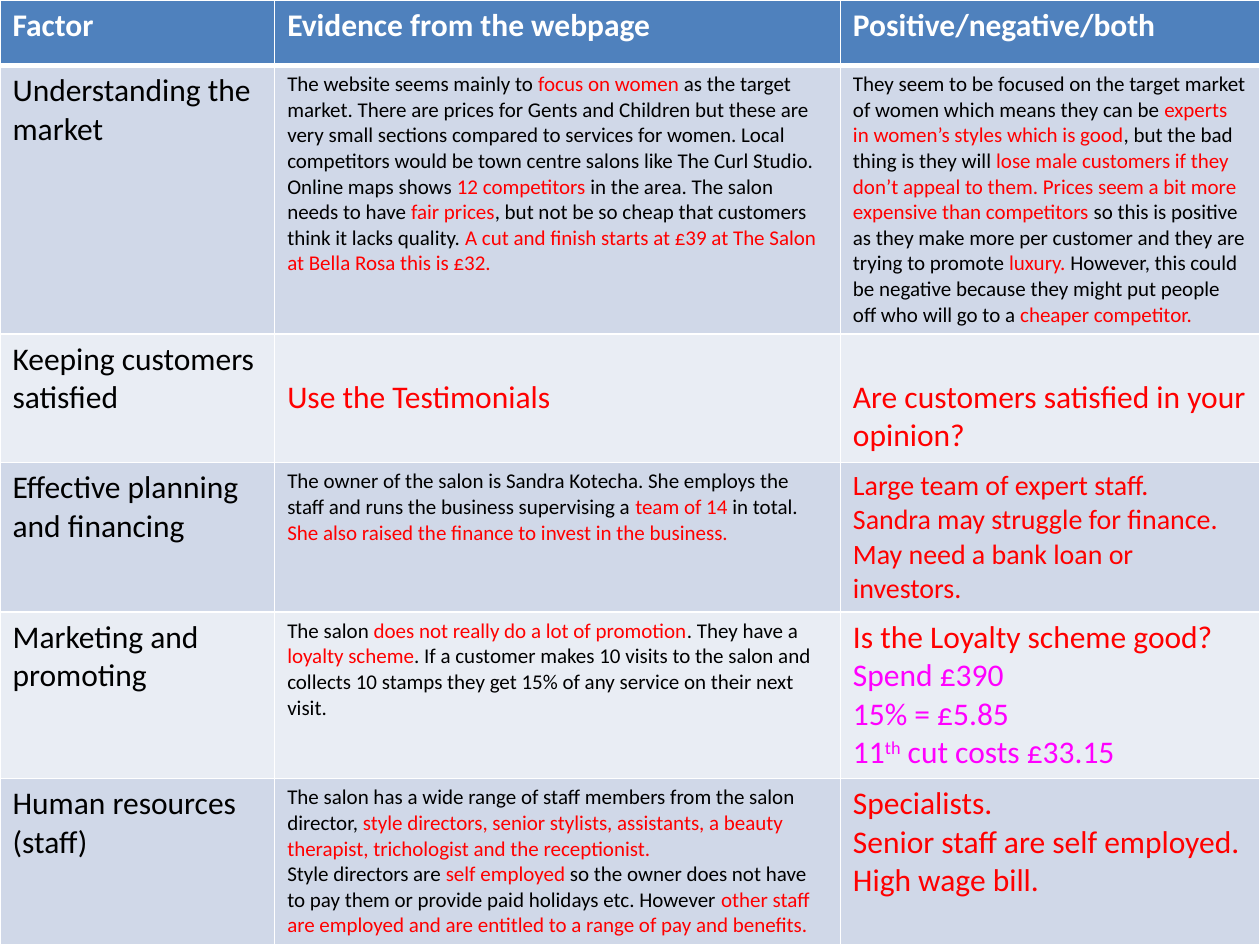
import pptx
import pptx.util
import pptx.dml.color
import pptx.oxml.ns
from lxml import etree

RGBColor = pptx.dml.color.RGBColor
WHITE = RGBColor(0xFF, 0xFF, 0xFF)
BLACK = RGBColor(0, 0, 0)
RED = RGBColor(0xFF, 0, 0)
MAGENTA = RGBColor(0xFF, 0, 0xFF)
HEADER_BLUE = RGBColor(0x4F, 0x81, 0xBD)
BANDS = (RGBColor(0xD0, 0xD8, 0xE8), RGBColor(0xE9, 0xED, 0xF4))
PAGE_BLUE = RGBColor(0xC6, 0xD9, 0xF1)

FONT = "Calibri"
COLUMN_SHARES = (2.18, 4.49, 3.33)
ROW_SHARES = (0.52, 2.13, 1.02, 1.18, 1.32, 1.32)
ONE_LINE_DOWN = pptx.util.Inches(0.35)

HEADERS = ("Factor", "Evidence from the webpage", "Positive/negative/both")

# Each row: factor, then (size, plain colour, accent colour, paragraphs) twice.
# In a paragraph, | switches between the two colours and ^ toggles superscript.
FACTORS = (
    ("Understanding the market",
     (12, BLACK, RED, [
         "The website seems mainly to |focus on women |as the target market. There are "
         "prices for Gents and Children but these are very small sections compared to "
         "services for women. Local competitors would be town centre salons like The Curl "
         "Studio. Online maps shows |12 competitors |in the area. The salon needs to have "
         "|fair prices|, but not be so cheap that customers think it lacks quality. "
         "|A cut and finish starts at £39 at The Salon at Bella Rosa this is £32."]),
     (12, BLACK, RED, [
         "They seem to be focused on the target market of women which means they can be "
         "|experts in women’s styles which is good|, but the bad thing is they will "
         "|lose male customers if they don’t appeal to them. Prices seem a bit more "
         "expensive than competitors |so this is positive as they make more per customer "
         "and they are trying to promote |luxury. |However, this could be negative because "
         "they might put people off who will go to a |cheaper competitor."])),
    ("Keeping customers satisfied",
     (18, RED, RED, ["Use the Testimonials"]),
     (18, RED, RED, ["Are customers satisfied in your opinion?"])),
    ("Effective planning and financing",
     (12, BLACK, RED, [
         "The owner of the salon is Sandra Kotecha. She employs the staff and runs the "
         "business supervising a |team of 14 |in total. "
         "|She also raised the finance to invest in the business."]),
     (16, RED, RED, [
         "Large team of expert staff.",
         "Sandra may struggle for finance. May need a bank loan or investors."])),
    ("Marketing and promoting",
     (12, BLACK, RED, [
         "The salon |does not really do a lot of promotion|. They have a |loyalty scheme|. "
         "If a customer makes 10 visits to the salon and collects 10 stamps they get 15% "
         "of any service on their next visit."]),
     (18, RED, MAGENTA, [
         "Is the Loyalty scheme good?| Spend £390",
         "|15% = £5.85",
         "|11^th^ cut costs £33.15"])),
    ("Human resources (staff)",
     (12, BLACK, RED, [
         "The salon has a wide range of staff members from the salon director, |style "
         "directors, senior stylists, assistants, a beauty therapist, trichologist and "
         "the receptionist.",
         "Style directors are |self employed |so the owner does not have to pay them or "
         "provide paid holidays etc. However |other staff are employed and are entitled "
         "to a range of pay and benefits."]),
     (18, RED, RED, [
         "Specialists.", "Senior staff are self employed.", "High wage bill."])),
)


def add_spans(para, text, colours):
    for index, piece in enumerate(text.split("|")):
        for level, part in enumerate(piece.split("^")):
            if not part:
                continue
            span = para.add_run()
            span.text = part
            span.font.color.rgb = colours[index % 2]
            if level % 2:
                span.font._element.set("baseline", "30000")


def fill_cell(cell, content, bold=False):
    size, plain, accent, paragraphs = content
    frame = cell.text_frame
    for index, text in enumerate(paragraphs):
        para = frame.add_paragraph() if index else frame.paragraphs[0]
        para.font.size = pptx.util.Pt(size)
        para.font.name = FONT
        para.font.bold = bold
        add_spans(para, text, (plain, accent))
        for span in para.runs:
            span.font.size, span.font.name, span.font.bold = para.font.size, FONT, bold


def paint_cell(cell, colour, bottom_width=1):
    """White borders on every side, then the fill."""
    properties = cell._tc.get_or_add_tcPr()
    for side, width in (("L", 1), ("R", 1), ("T", 1), ("B", bottom_width)):
        line = etree.SubElement(properties, pptx.oxml.ns.qn("a:ln" + side),
                                w=str(pptx.util.Pt(width)))
        solid = etree.SubElement(line, pptx.oxml.ns.qn("a:solidFill"))
        etree.SubElement(solid, pptx.oxml.ns.qn("a:srgbClr"), val=str(WHITE))
    cell.fill.solid()
    cell.fill.fore_color.rgb = colour


def add_factor_table(page, left, top, width, height):
    table = page.shapes.add_table(len(ROW_SHARES), len(COLUMN_SHARES),
                                  left, top, width, height).table
    for column, share in zip(table.columns, COLUMN_SHARES):
        column.width = int(width * share / sum(COLUMN_SHARES))
    for row, share in zip(table.rows, ROW_SHARES):
        row.height = int(height * share / sum(ROW_SHARES))

    # Header row
    for cell, title in zip(table.rows[0].cells, HEADERS):
        fill_cell(cell, (18, WHITE, WHITE, [title]), bold=True)
        paint_cell(cell, HEADER_BLUE, bottom_width=3)

    # One banded row per factor
    for number, (factor, evidence, verdict) in enumerate(FACTORS):
        contents = ((18, BLACK, BLACK, [factor]), evidence, verdict)
        for cell, content in zip(table.rows[number + 1].cells, contents):
            fill_cell(cell, content)
            paint_cell(cell, BANDS[number % 2])

    # The customer answers start one line lower than their factor
    for column in (1, 2):
        table.cell(2, column).margin_top = ONE_LINE_DOWN


def main():
    deck = pptx.Presentation()
    deck.slide_width = pptx.util.Inches(10)
    deck.slide_height = pptx.util.Inches(7.5)
    page = deck.slides.add_slide(deck.slide_layouts[6])
    page.background.fill.solid()
    page.background.fill.fore_color.rgb = PAGE_BLUE
    add_factor_table(page, 0, 0, deck.slide_width, pptx.util.Inches(sum(ROW_SHARES)))
    deck.save("out.pptx")


if __name__ == "__main__":
    main()
